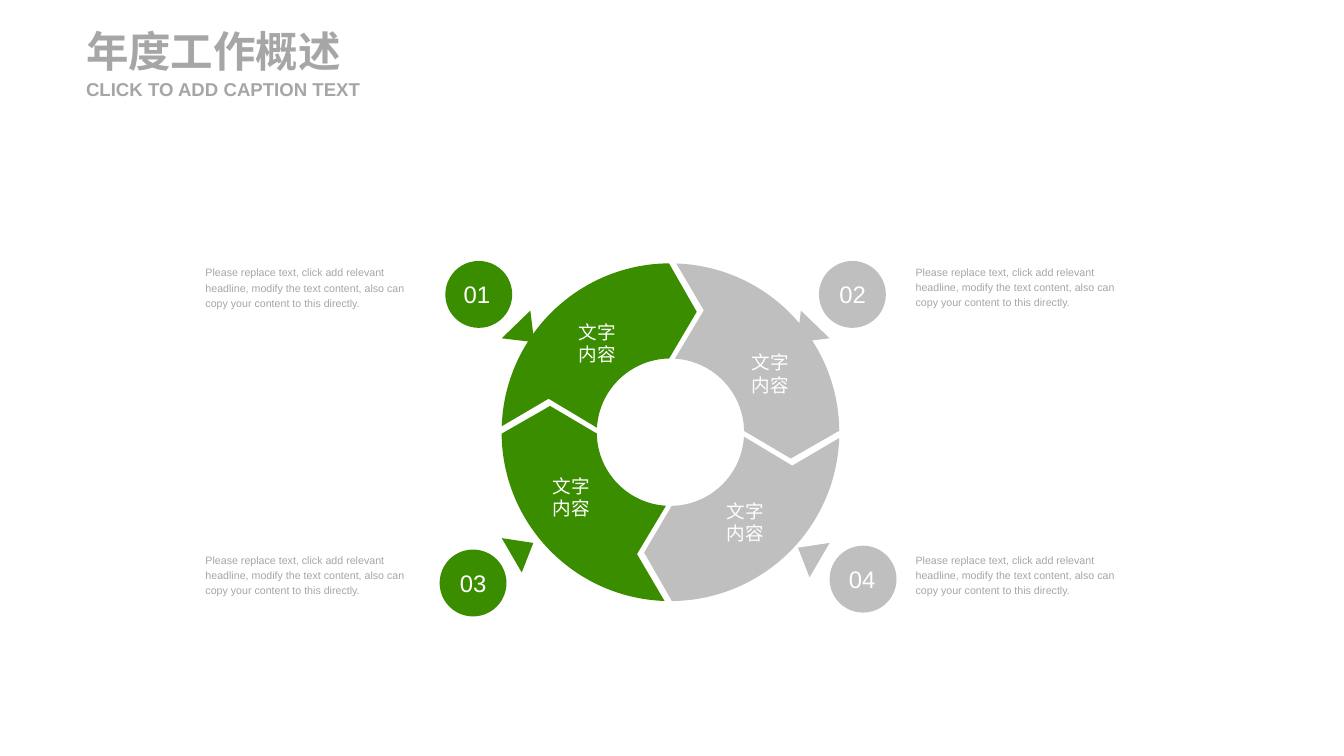
import math
from dataclasses import dataclass

from lxml import etree
from pptx import Presentation
from pptx.dml.color import RGBColor
from pptx.enum import shapes, text
from pptx.oxml import ns
from pptx.util import Pt


@dataclass(frozen=True)
class Theme:
    font: str = "Arial"
    green: str = "3B8D00"
    silver: str = "BFBFBF"
    grey: str = "A6A6A6"
    white: str = "FFFFFF"
    title: int = 32
    number: int = 18
    label: int = 14
    subtitle: int = 14
    caption: int = 8


THEME = Theme()
CAPTION = ("Please replace text, click add relevant headline, modify the text "
           "content, also can copy your content to this directly.")
LABEL = "文字内容"

RING_X, RING_Y = 505.1, 325.6
OUTER, INNER = 127.2, 55.5
NOTCH, TIP = (25.2, -91.8), (90.7, 19.8)
OUTER_ARC, INNER_ARC = 0, 5  # places of the arcs in a ring arrow's outline
BADGE = 50.4
MIRROR = 1003  # sum of the x values of a left pointer and its right twin
UPPER_POINTER = [(399.6, 234), (378, 254.9), (402.5, 257.8)]
LOWER_POINTER = [(378, 405.4), (393.1, 431.3), (401.8, 409)]


@dataclass(frozen=True)
class Section:
    number: str
    number_left: float
    color: str
    quarter_turns: int
    badge: tuple
    pointer: list
    label: tuple
    caption: tuple
    caption_width: float


def left_section(number, number_left, turns, badge, pointer, label, caption):
    return Section(number, number_left, THEME.green, turns, badge, pointer,
                   label, caption, 162)


def right_section(number, number_left, turns, badge, pointer, drop, label, caption):
    """Section whose pointer mirrors the left one, lowered by drop."""
    mirrored = [(MIRROR - x, y + drop) for x, y in pointer]
    return Section(number, number_left, THEME.silver, turns, badge, mirrored,
                   label, caption, 165.6)


SECTIONS = [
    left_section("01", 334.8, 3, (335.5, 196.6), UPPER_POINTER,
                 (429.8, 231.8), (154.8, 198.7)),
    right_section("02", 617.8, 0, (617, 196.6), UPPER_POINTER, 0,
                  (560.2, 254.9), (689.8, 198.3)),
    left_section("03", 331.9, 2, (331.2, 414), LOWER_POINTER,
                 (410.4, 347.8), (154.8, 415.4)),
    right_section("04", 625, 1, (625, 411.1), LOWER_POINTER, 3.6,
                  (541.4, 366.5), (689.8, 415.4)),
]


def paint(shape, color):
    shape.shadow.inherit = False
    shape.fill.solid()
    shape.fill.fore_color.rgb = RGBColor.from_string(color)
    shape.line.fill.background()


def write(shape, words, size, color, align=text.PP_ALIGN.LEFT,
          anchor=text.MSO_ANCHOR.MIDDLE, bold=False, spacing=1.0):
    frame = shape.text_frame
    frame.word_wrap = True
    frame.auto_size = text.MSO_AUTO_SIZE.NONE
    frame.vertical_anchor = anchor
    frame.margin_left = frame.margin_right = 0
    frame.margin_top = frame.margin_bottom = 0
    paragraph = frame.paragraphs[0]
    paragraph.alignment = align
    paragraph.line_spacing = spacing
    paragraph.space_before = Pt(0)
    run = paragraph.add_run()
    run.text = words
    run.font.name = THEME.font
    run.font.size = Pt(size)
    run.font.bold = bold
    run.font.color.rgb = RGBColor.from_string(color)


def place(shape, left, top, width, height):
    shape.left, shape.top = Pt(left), Pt(top)
    shape.width, shape.height = Pt(width), Pt(height)


def add_heading(slide):
    title, subtitle = slide.placeholders
    place(title, 64.8, 18.7, 221, 38.9)
    write(title, "年度工作概述", THEME.title, THEME.grey, bold=True)
    place(subtitle, 64.8, 58.3, 221, 17.3)
    write(subtitle, "CLICK TO ADD CAPTION TEXT", THEME.subtitle, THEME.grey, bold=True)


def add_outline(slide, points, color):
    corners = [(Pt(x), Pt(y)) for x, y in points]
    builder = slide.shapes.build_freeform(*corners[0])
    builder.add_line_segments(corners[1:], close=True)
    outline = builder.convert_to_shape()
    paint(outline, color)
    return outline


def arc(radius, start, end):
    """Start, two control points and end of a Bezier arc, angles in degrees."""
    a, b = math.radians(start), math.radians(end)
    reach = 4 / 3 * math.tan((b - a) / 4)

    def on_tangent(angle, pull):
        return (radius * (math.cos(angle) - pull * math.sin(angle)),
                radius * (math.sin(angle) + pull * math.cos(angle)))

    return [on_tangent(a, 0), on_tangent(a, reach), on_tangent(b, -reach), on_tangent(b, 0)]


def bend(outline, starts):
    """Turn the three lines after each start point into one Bezier curve."""
    lines = list(outline.element.iter(ns.qn("a:lnTo")))
    for start in starts:
        curve = etree.Element(ns.qn("a:cubicBezTo"))
        lines[start].addprevious(curve)
        for line in lines[start:start + 3]:
            curve.append(line[0])
            line.getparent().remove(line)


def add_ring_arrow(slide, section):
    """One quarter of the ring, drawn at the top right and turned into place."""
    points = [*arc(OUTER, -0.5, -88), NOTCH, *arc(INNER, -86.5, -1), TIP]
    for _ in range(section.quarter_turns):
        points = [(-y, x) for x, y in points]
    arrow = add_outline(slide, [(RING_X + x, RING_Y + y) for x, y in points], section.color)
    bend(arrow, (OUTER_ARC, INNER_ARC))


def add_text(slide, position, width, height, words, size, color, **style):
    left, top = position
    box = slide.shapes.add_textbox(Pt(left), Pt(top), Pt(width), Pt(height))
    write(box, words, size, color, **style)


def add_badge(slide, section):
    left, top = section.badge
    badge = slide.shapes.add_shape(shapes.MSO_SHAPE.OVAL, Pt(left), Pt(top),
                                   Pt(BADGE), Pt(BADGE))
    paint(badge, section.color)
    add_text(slide, (section.number_left, top + 5.8), 49, 38.2, section.number,
             THEME.number, THEME.white, align=text.PP_ALIGN.CENTER)


def main():
    deck = Presentation()
    deck.slide_width, deck.slide_height = Pt(1012.5), Pt(569.5)
    slide = deck.slides.add_slide(deck.slide_layouts[0])
    add_heading(slide)
    for section in SECTIONS:
        add_badge(slide, section)
        add_outline(slide, section.pointer, section.color)
        add_ring_arrow(slide, section)
        add_text(slide, section.label, 40, 53.3, LABEL, THEME.label, THEME.white,
                 align=text.PP_ALIGN.CENTER)
        add_text(slide, section.caption, section.caption_width, 33.8, CAPTION,
                 THEME.caption, THEME.grey, anchor=text.MSO_ANCHOR.TOP, spacing=1.2)
    deck.save("out.pptx")


if __name__ == "__main__":
    main()
